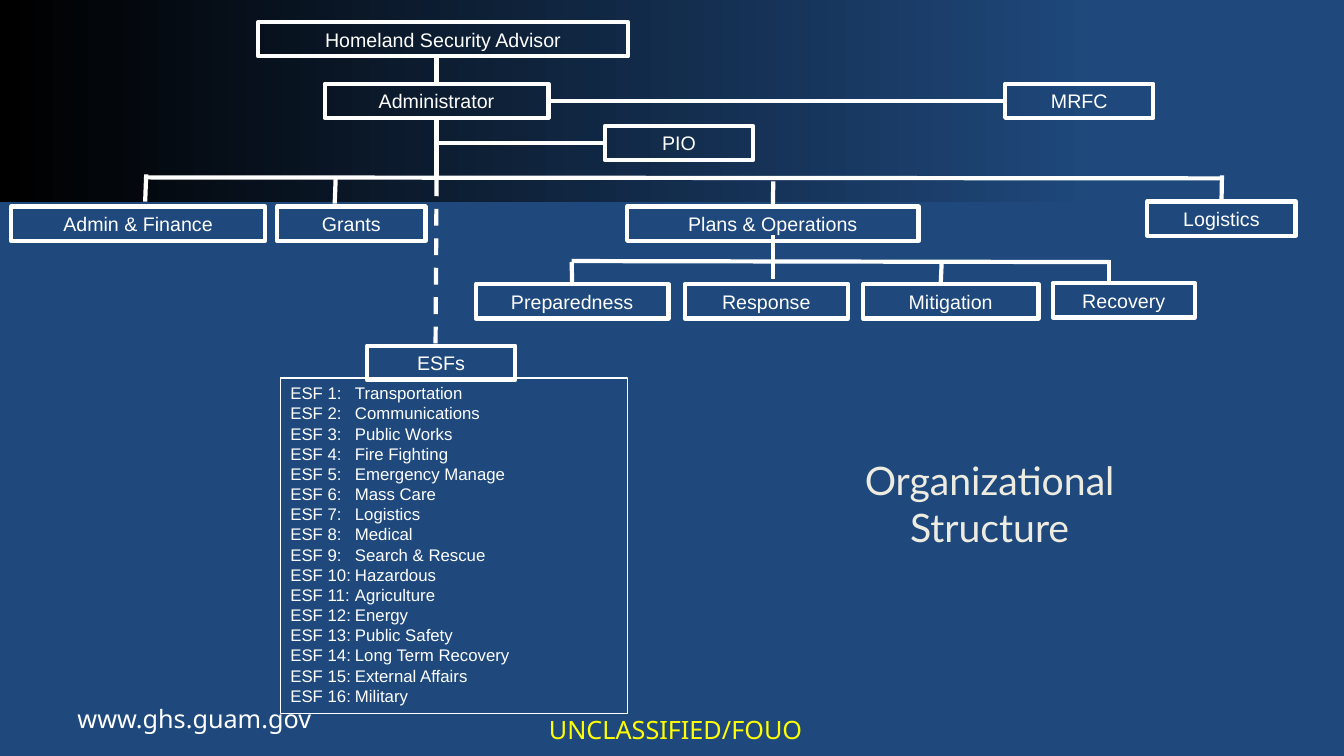
from pptx import Presentation
from pptx.dml.color import RGBColor
from pptx.enum.dml import MSO_LINE
from pptx.enum.shapes import MSO_CONNECTOR, MSO_SHAPE
from pptx.enum.text import MSO_ANCHOR, MSO_AUTO_SIZE, PP_ALIGN
from pptx.oxml.ns import qn
from pptx.util import Inches, Pt
from lxml import etree

RECT, STRAIGHT, DASH = MSO_SHAPE.RECTANGLE, MSO_CONNECTOR.STRAIGHT, MSO_LINE.DASH
LEFT, CENTER = PP_ALIGN.LEFT, PP_ALIGN.CENTER
TOP, MIDDLE, BOTTOM = MSO_ANCHOR.TOP, MSO_ANCHOR.MIDDLE, MSO_ANCHOR.BOTTOM
NO_FIT = MSO_AUTO_SIZE.NONE
SIDE_TOP, SIDE_LEFT, SIDE_BOTTOM, SIDE_RIGHT = range(4)

THEME = {
    "navy": RGBColor.from_string("1F497D"), "deep": RGBColor.from_string("1E477A"),
    "black": RGBColor.from_string("000000"), "white": RGBColor.from_string("FFFFFF"),
    "cream": RGBColor.from_string("EEECE1"), "yellow": RGBColor.from_string("FFFF00"),
    "box": Pt(14), "list": Pt(12), "title": Pt(28), "note": Pt(18),
    "thick": Pt(3), "thin": Pt(0.75),
}


def write(shape, text, size="box", font="Arial", color="white",
          align=CENTER, anchor=MIDDLE, hang=0):
    """Fill a shape with text, one paragraph per line."""
    frame = shape.text_frame
    frame.text = text
    frame.word_wrap = True
    frame.auto_size = NO_FIT
    frame.vertical_anchor = anchor
    for par in frame.paragraphs:
        par.alignment = align
        par.space_before = Pt(0)
        par.font.size = THEME[size]
        par.font.name = font
        par.font.bold = False
        par.font.color.rgb = THEME[color]
        if hang:
            props = par._p.get_or_add_pPr()
            props.set("marL", str(Inches(hang)))
            props.set("indent", str(-Inches(hang)))
            etree.SubElement(props, qn("a:buNone"))


def place(shape, *area):
    """Move and size a shape, in inches."""
    shape.left, shape.top, shape.width, shape.height = map(Inches, area)


deck = Presentation()
deck.slide_width, deck.slide_height = Inches(13.33), Inches(7.5)
slide = deck.slides.add_slide(deck.slide_layouts[1])
shapes = slide.shapes
slide.background.fill.solid()
slide.background.fill.fore_color.rgb = THEME["navy"]

# Gradient wedges behind the chart
wedges = [
    ("deep", [(10.37, 1.53), (0, 2.17), (0, 1.01), (10.39, 1.01), (10.37, 1.28)]),
    ("black", [(10.56, 1.62), (0, 2.08), (0, 0), (10.56, 0)]),
]
for shade, points in wedges:
    outline = shapes.build_freeform(*points[0], scale=Inches(1))
    outline.add_line_segments(points[1:], close=True)
    wedge = outline.convert_to_shape()
    wedge.shadow.inherit = False
    wedge.line.fill.background()
    wedge.fill.gradient()
    wedge.fill.gradient_angle = 0
    for stop, name in zip(wedge.fill.gradient_stops, (shade, "navy")):
        stop.color.rgb = THEME[name]

# Title
place(shapes.title, 7.78, 4.33, 4.07, 1.33)
write(shapes.title, "Organizational Structure", size="title", font="Lato", color="cream")

# List of support functions
duties = ["Transportation", "Communications", "Public Works", "Fire Fighting",
          "Emergency Manage", "Mass Care", "Logistics", "Medical",
          "Search & Rescue", "Hazardous", "Agriculture", "Energy",
          "Public Safety", "Long Term Recovery", "External Affairs", "Military"]
body = slide.placeholders[1]
place(body, 2.78, 3.75, 3.44, 3.33)
body.line.color.rgb = THEME["white"]
body.line.width = THEME["thin"]
rows = [f"ESF {num}:\t{duty}" for num, duty in enumerate(duties, 1)]
write(body, "\n".join(rows), size="list", align=LEFT, anchor=TOP, hang=0.64)

# Boxes: name, left, top, width
units = [
    ("Homeland Security Advisor", 2.56, 0.22, 3.67),
    ("Administrator", 3.22, 0.83, 2.22),
    ("MRFC", 9.97, 0.83, 1.47),
    ("PIO", 6, 1.25, 1.47),
    ("Admin & Finance", 0.11, 2.05, 2.52),
    ("Grants", 2.75, 2.05, 1.47),
    ("Plans & Operations", 6.22, 2.05, 2.89),
    ("Logistics", 11.38, 2, 1.47),
    ("Preparedness", 4.72, 2.82, 1.91),
    ("Response", 6.79, 2.82, 1.62),
    ("Mitigation", 8.56, 2.82, 1.74),
    ("Recovery", 10.44, 2.81, 1.41),
    ("ESFs", 3.64, 3.43, 1.47),
]
boxes = {}
for name, left, top, width in units:
    box = shapes.add_shape(RECT, Inches(left), Inches(top), Inches(width), Inches(0.34))
    box.shadow.inherit = False
    box.fill.background()
    box.line.color.rgb = THEME["white"]
    box.line.width = THEME["thick"]
    write(box, name)
    boxes[name] = box

# Lines: ends, then the box sides they join
links = [
    ((4.33, 0.56, 4.33, 0.83), None, ("Administrator", SIDE_TOP)),
    ((5.44, 1, 9.97, 1), ("Administrator", SIDE_RIGHT), ("MRFC", SIDE_LEFT)),
    ((4.33, 1.17, 4.33, 1.76), ("Administrator", SIDE_BOTTOM), None),
    ((4.32, 1.42, 6, 1.42), None, ("PIO", SIDE_LEFT)),
    ((12.11, 1.77, 1.45, 1.76), None, None),
    ((1.45, 1.73, 1.44, 2), None, None),
    ((3.33, 1.75, 3.32, 2.02), None, None),
    ((7.67, 1.8, 7.67, 2.05), None, ("Plans & Operations", SIDE_TOP)),
    ((12.12, 1.74, 12.11, 2), None, ("Logistics", SIDE_TOP)),
    ((7.67, 2.33, 7.67, 2.77), None, None),
    ((5.67, 2.59, 11, 2.6), None, None),
    ((5.67, 2.6, 5.67, 2.82), None, ("Preparedness", SIDE_TOP)),
    ((9.34, 2.6, 9.33, 2.82), None, None),
    ((11, 2.58, 11, 2.81), None, None),
    ((4.33, 1.78, 4.32, 3.45), None, None),
]
for ends, start, end in links:
    link = shapes.add_connector(STRAIGHT, *map(Inches, ends))
    if start:
        link.begin_connect(boxes[start[0]], start[1])
    if end:
        link.end_connect(boxes[end[0]], end[1])
    link.line.color.rgb = THEME["white"]
    link.line.width = THEME["thick"]
    etree.SubElement(link._element.spPr, qn("a:effectLst"))
link.line.dash_style = DASH  # the last line leads down to the ESFs

# Footer notes
notes = [
    ("UNCLASSIFIED/FOUO", (4.59, 7.11, 4.22, 0.33), "yellow", CENTER),
    ("www.ghs.guam.gov", (0.67, 6.83, 4.22, 0.5), "white", LEFT),
]
for text, area, color, align in notes:
    note = shapes.add_textbox(*map(Inches, area))
    write(note, text, size="note", font="Noto Sans", color=color, align=align, anchor=BOTTOM)

deck.save("out.pptx")
